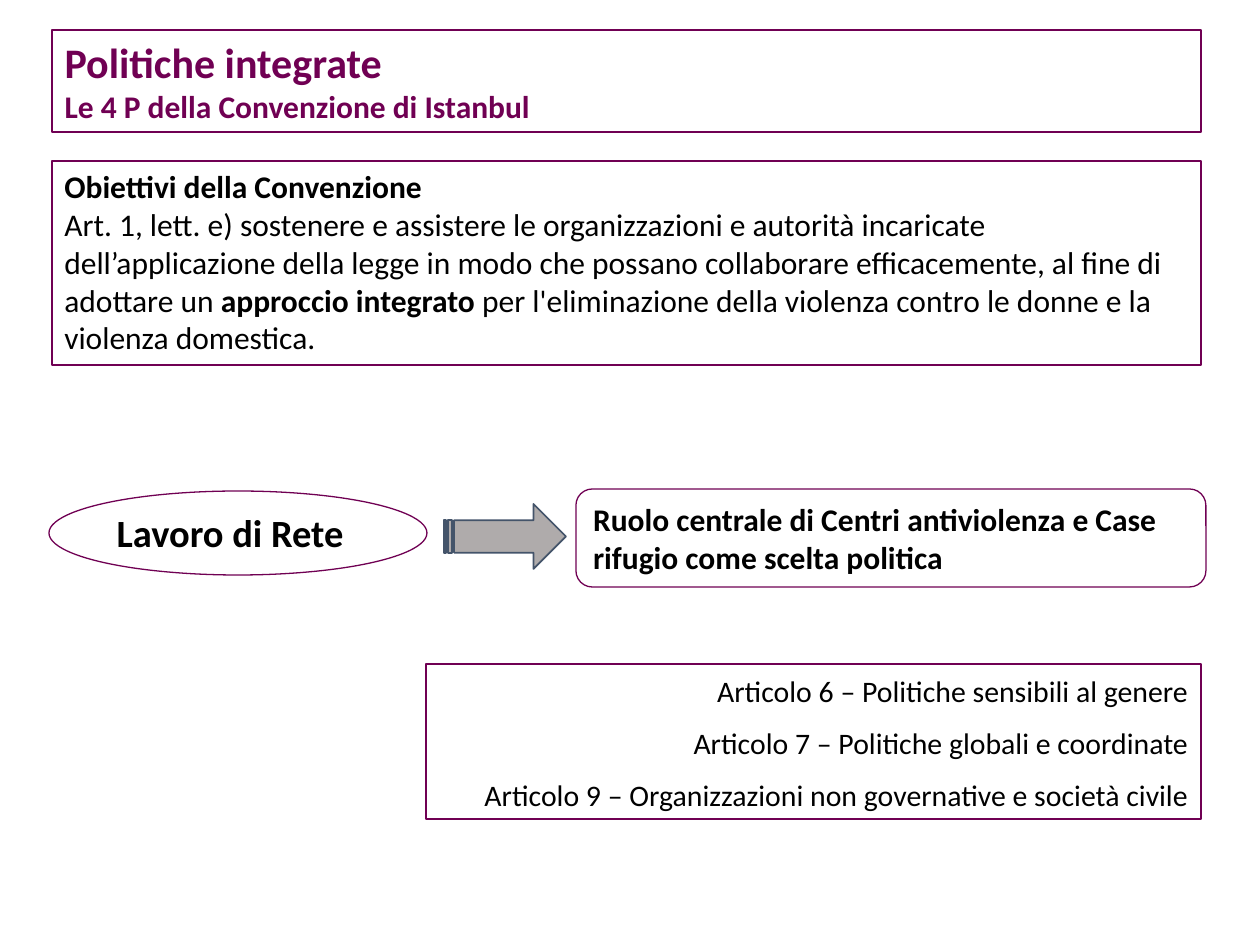
import pptx
import pptx.dml.color
import pptx.enum.shapes
import pptx.enum.text
import pptx.oxml.ns
import pptx.util
from lxml import etree

PX = 914400 / 126
PURPLE = pptx.dml.color.RGBColor(0x70, 0x00, 0x53)
BLACK = pptx.dml.color.RGBColor(0, 0, 0)
WHITE = pptx.dml.color.RGBColor(255, 255, 255)
GREY = pptx.dml.color.RGBColor(0xAF, 0xAB, 0xAB)
SLATE = pptx.dml.color.RGBColor(0x44, 0x54, 0x6A)
SHAPES = pptx.enum.shapes.MSO_SHAPE
ALIGN = pptx.enum.text.PP_ALIGN


def frame(shape, left, top, width, height, fill=None):
    """Place a box, give it the thin purple outline and prepare its text."""
    shape.left, shape.top, shape.width, shape.height = (
        round(length * PX) for length in (left, top, width, height))
    if fill is None:
        shape.fill.background()
    else:
        shape.fill.solid()
        shape.fill.fore_color.rgb = fill
    shape.line.color.rgb = PURPLE
    shape.line.width = pptx.util.Pt(0.75)
    text = shape.text_frame
    text.word_wrap = True
    text.auto_size = pptx.enum.text.MSO_AUTO_SIZE.NONE
    text.vertical_anchor = pptx.enum.text.MSO_ANCHOR.TOP
    return text


def write(paragraph, runs, size, color=BLACK, align=ALIGN.LEFT):
    """Add (text, bold) runs to a paragraph."""
    paragraph.alignment = align
    paragraph.space_before = pptx.util.Pt(0)
    for words, bold in runs:
        run = paragraph.add_run()
        run.text = words
        run.font.name = "Calibri"
        run.font.size = pptx.util.Pt(size)
        run.font.bold = bold
        run.font.color.rgb = color


deck = pptx.Presentation()
deck.slide_width = round(1260 * PX)
deck.slide_height = round(945 * PX)
slide = deck.slides.add_slide(deck.slide_layouts[1])

heading = frame(slide.shapes.title, 52, 30, 1149, 102)
write(heading.paragraphs[0], [("Politiche integrate", True)], 24, PURPLE)
write(heading.add_paragraph(),
      [("Le 4 P della Convenzione di Istanbul", True)], 18, PURPLE)

articles = frame(slide.placeholders[1], 426, 664, 775, 155)
for index, article in enumerate((
        "Articolo 6 – Politiche sensibili al genere",
        "Articolo 7 – Politiche globali e coordinate",
        "Articolo 9 – Organizzazioni non governative e società civile")):
    line = articles.add_paragraph() if index else articles.paragraphs[0]
    properties = line._p.get_or_add_pPr()
    properties.set("marL", "0")
    properties.set("indent", "0")
    etree.SubElement(properties, pptx.oxml.ns.qn("a:buNone"))
    write(line, [(article, False)], 17, align=ALIGN.RIGHT)
    line.line_spacing = 1.07
    line.space_after = pptx.util.Pt(8)

objectives = frame(slide.shapes.add_textbox(0, 0, 0, 0), 52, 161, 1149, 204)
write(objectives.paragraphs[0], [("Obiettivi della Convenzione", True)], 18)
write(objectives.add_paragraph(), [
    ("Art. 1, lett. e) sostenere e assistere le organizzazioni e autorità "
     "incaricate dell’applicazione della legge in modo che possano "
     "collaborare efficacemente, al fine di adottare un ", False),
    ("approccio integrato ", True),
    ("per l'eliminazione della violenza contro le donne e la violenza "
     "domestica.", False)], 18)

for kind, box, words, size in (
        (SHAPES.OVAL, (49, 491, 378, 84), "Lavoro di Rete", 22),
        (SHAPES.ROUNDED_RECTANGLE, (576, 489, 630, 98),
         "Ruolo centrale di Centri antiviolenza e Case rifugio come scelta "
         "politica", 18)):
    step = slide.shapes.add_shape(kind, 0, 0, 0, 0)
    step.shadow.inherit = False
    write(frame(step, *box, WHITE).paragraphs[0], [(words, True)], size)

arrow = slide.shapes.add_shape(
    SHAPES.STRIPED_RIGHT_ARROW,
    *(round(length * PX) for length in (444, 504, 122, 65)))
arrow.shadow.inherit = False
arrow.fill.solid()
arrow.fill.fore_color.rgb = GREY
arrow.line.color.rgb = SLATE
arrow.line.width = pptx.util.Pt(1)

deck.save("out.pptx")
